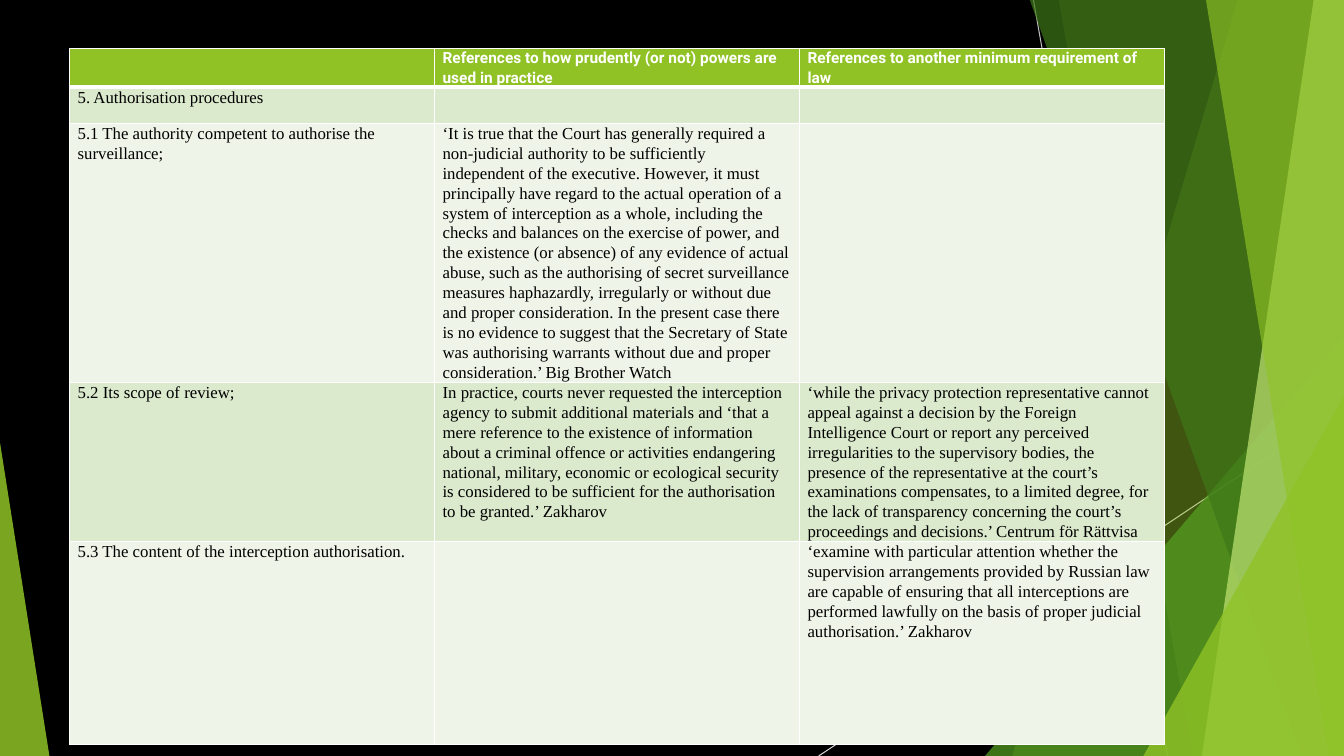
from dataclasses import dataclass

from lxml import etree
from pptx import Presentation
from pptx.dml.color import RGBColor
from pptx.enum.shapes import MSO_CONNECTOR, MSO_SHAPE
from pptx.oxml.ns import qn
from pptx.util import Emu, Pt

PX = 9144  # 100 px to the inch
COLORS = {
    "black": "000000", "white": "FFFFFF", "grey": "BFBFBF", "pale_grey": "D9D9D9",
    "lime": "90C226", "green": "54A021", "forest": "3F7819", "pale_lime": "C0E474",
    "band_dark": "DBE9CD", "band_light": "EEF4E8",
}


@dataclass
class Ray:
    start: tuple[int, int]
    end: tuple[int, int]
    color: str


@dataclass
class Shard:
    """A pane that runs from the top edge to the bottom edge."""
    top_left: int
    top_right: int
    bottom_right: int
    bottom_left: int
    color: str
    alpha: int


@dataclass
class Wedge:
    left: int
    top: int
    width: int
    height: int
    apex: int
    color: str
    alpha: int


RAYS = [
    Ray((1025, 0), (1158, 750), "grey"),
    Ray((1333, 403), (812, 750), "pale_grey"),
]
FACETS = [
    Shard(1228, 1333, 1333, 1004, "lime", 30),
    Shard(1050, 1333, 1333, 1183, "lime", 20),
    Wedge(977, 333, 356, 417, 1, "green", 72),
    Shard(1021, 1333, 1333, 1291, "forest", 70),
    Shard(1303, 1333, 1333, 1192, "pale_lime", 70),
    Shard(1196, 1333, 1333, 1318, "lime", 65),
    Wedge(1134, 393, 199, 357, 1, "lime", 80),
    Wedge(0, 439, 49, 311, 0, "lime", 85),
]

COL_WIDTH = 362
ROW_HEIGHTS = [36, 36, 252, 155, 201]
HEADER_BORDERS = {"a:lnL": 1, "a:lnR": 1, "a:lnT": 1, "a:lnB": 3}
ROWS = [
    ("", "References to how prudently (or not) powers are used in practice",
     "References to another minimum requirement of law"),
    ("5. Authorisation procedures", "", ""),
    ("5.1 The authority competent to authorise the surveillance;",
     "‘It is true that the Court has generally required a non-judicial authority to be "
     "sufficiently independent of the executive. However, it must principally have regard "
     "to the actual operation of a system of interception as a whole, including the checks "
     "and balances on the exercise of power, and the existence (or absence) of any evidence "
     "of actual abuse, such as the authorising of secret surveillance measures haphazardly, "
     "irregularly or without due and proper consideration. In the present case there is no "
     "evidence to suggest that the Secretary of State was authorising warrants without due "
     "and proper consideration.’ Big Brother Watch", ""),
    ("5.2 Its scope of review;",
     "In practice, courts never requested the interception agency to submit additional "
     "materials and ‘that a mere reference to the existence of information about a criminal "
     "offence or activities endangering national, military, economic or ecological security "
     "is considered to be sufficient for the authorisation to be granted.’ Zakharov",
     "‘while the privacy protection representative cannot appeal against a decision by the "
     "Foreign Intelligence Court or report any perceived irregularities to the supervisory "
     "bodies, the presence of the representative at the court’s examinations compensates, "
     "to a limited degree, for the lack of transparency concerning the court’s proceedings "
     "and decisions.’ Centrum för Rättvisa"),
    ("5.3 The content of the interception authorisation.", "",
     "‘examine with particular attention whether the supervision arrangements provided by "
     "Russian law are capable of ensuring that all interceptions are performed lawfully on "
     "the basis of proper judicial authorisation.’ Zakharov"),
]


def px(n: int) -> Emu:
    return Emu(n * PX)


def rgb(name: str) -> RGBColor:
    return RGBColor.from_string(COLORS[name])


def draw_ray(shapes, ray: Ray) -> None:
    line = shapes.add_connector(MSO_CONNECTOR.STRAIGHT, *map(px, ray.start + ray.end))
    line.line.color.rgb = rgb(ray.color)
    line.line.width = Pt(0.75)
    etree.SubElement(line._element.spPr, qn("a:effectLst"))


def draw_facet(shapes, facet: Shard | Wedge) -> None:
    if isinstance(facet, Wedge):
        s = shapes.add_shape(MSO_SHAPE.ISOSCELES_TRIANGLE, px(facet.left), px(facet.top),
                             px(facet.width), px(facet.height))
        s.adjustments[0] = facet.apex
    else:
        builder = shapes.build_freeform(facet.top_left, -1, scale=PX)
        builder.add_line_segments([(facet.top_right, -1), (facet.bottom_right, 750),
                                   (facet.bottom_left, 750)], close=True)
        s = builder.convert_to_shape()
    s.shadow.inherit = False
    s.line.fill.background()
    s.fill.solid()
    s.fill.fore_color.rgb = rgb(facet.color)
    color = s._element.spPr.find(qn("a:solidFill"))[0]
    etree.SubElement(color, qn("a:alpha"), val=str(facet.alpha * 1000))


def add_header_borders(cell) -> None:
    tc_pr = cell._tc.get_or_add_tcPr()
    for i, (tag, points) in enumerate(HEADER_BORDERS.items()):
        ln = etree.Element(qn(tag), w=str(Pt(points)))
        fill = etree.SubElement(ln, qn("a:solidFill"))
        etree.SubElement(fill, qn("a:srgbClr"), val=COLORS["white"])
        tc_pr.insert(i, ln)


def fill_cell(cell, text: str, row: int) -> None:
    header = row == 0
    cell.fill.solid()
    cell.fill.fore_color.rgb = rgb(
        "lime" if header else "band_dark" if row % 2 else "band_light")
    cell.margin_left, cell.margin_right = px(8), px(9)
    cell.margin_top = cell.margin_bottom = 0
    if header:
        add_header_borders(cell)
    if not text:
        return
    cell.text = text
    p = cell.text_frame.paragraphs[0]
    p.line_spacing = 1.07
    p.font.name = "Roboto" if header else "Times New Roman"
    p.font.size = Pt(11 if header else 12)
    p.font.bold = header
    p.font.color.rgb = rgb("white" if header else "black")


def draw_table(shapes) -> None:
    cols = len(ROWS[0])
    table = shapes.add_table(len(ROWS), cols, px(69), px(48), px(cols * COL_WIDTH),
                             px(sum(ROW_HEIGHTS))).table
    for col in table.columns:
        col.width = px(COL_WIDTH)
    for r, (height, texts) in enumerate(zip(ROW_HEIGHTS, ROWS)):
        table.rows[r].height = px(height)
        for c, text in enumerate(texts):
            fill_cell(table.cell(r, c), text, r)


def main() -> None:
    prs = Presentation()
    prs.slide_width, prs.slide_height = px(1333), px(750)
    slide = prs.slides.add_slide(prs.slide_layouts[6])
    slide.background.fill.solid()
    slide.background.fill.fore_color.rgb = rgb("black")

    # Faceted backdrop
    for ray in RAYS:
        draw_ray(slide.shapes, ray)
    for facet in FACETS:
        draw_facet(slide.shapes, facet)

    # Comparison table
    draw_table(slide.shapes)
    prs.save("out.pptx")


if __name__ == "__main__":
    main()
